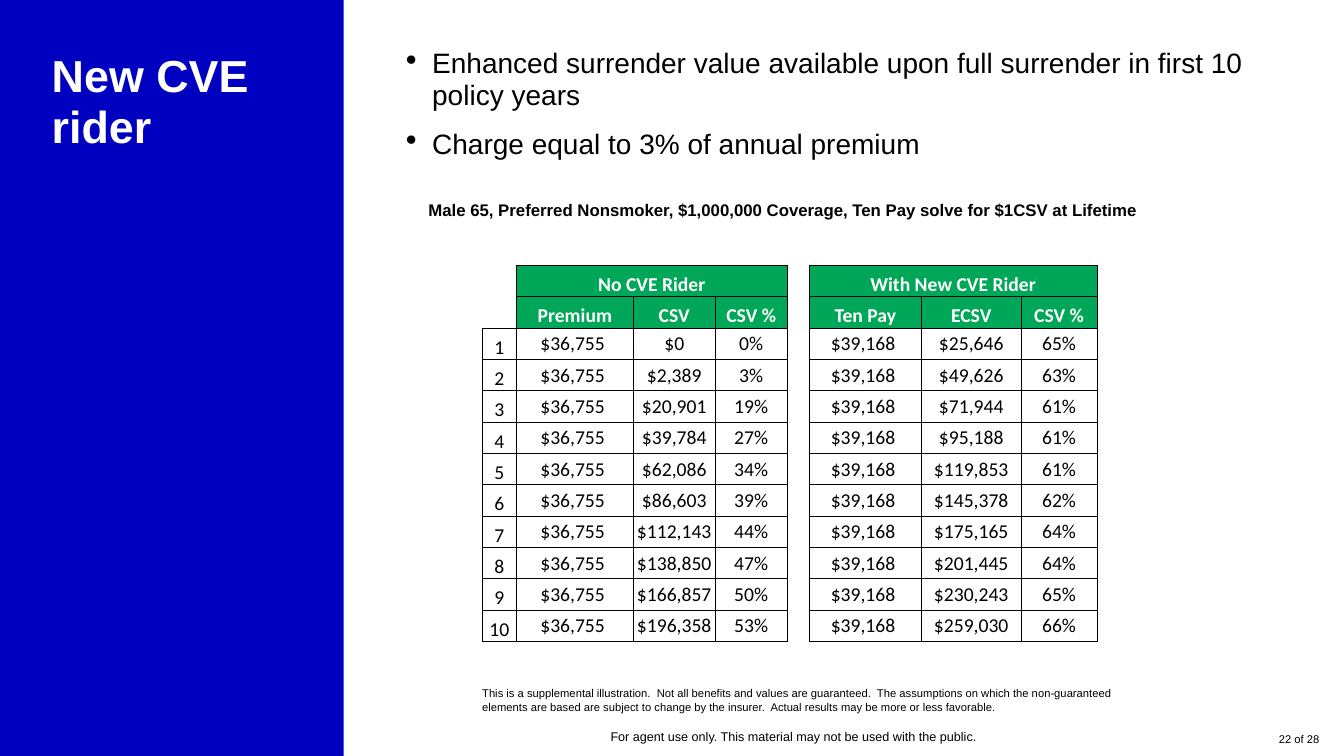
from lxml import etree
from pptx import Presentation
from pptx.dml.color import RGBColor
from pptx.enum.shapes import MSO_SHAPE
from pptx.enum.text import MSO_ANCHOR, PP_ALIGN
from pptx.oxml.ns import qn
from pptx.util import Pt

RECTANGLE = MSO_SHAPE.RECTANGLE
TOP, MIDDLE, BOTTOM = MSO_ANCHOR.TOP, MSO_ANCHOR.MIDDLE, MSO_ANCHOR.BOTTOM
LEFT, CENTER, RIGHT = PP_ALIGN.LEFT, PP_ALIGN.CENTER, PP_ALIGN.RIGHT

COLORS = {"panel": "0000C1", "header": "00A758", "ink": "000000", "paper": "FFFFFF"}

BULLETS = [
    "Enhanced surrender value available upon full surrender in first 10 policy years",
    "Charge equal to 3% of annual premium",
]
CAPTION = "Male 65, Preferred Nonsmoker, $1,000,000 Coverage, Ten Pay solve for $1CSV at Lifetime"
DISCLAIMER = (
    "This is a supplemental illustration.  Not all benefits and values are guaranteed.  "
    "The assumptions on which the non-guaranteed elements are based are subject to change "
    "by the insurer.  Actual results may be more or less favorable."
)
AGENT_NOTE = "For agent use only. This material may not be used with the public."

# Table content: CSV, CSV %, ECSV, CSV % for each policy year
PREMIUM, TEN_PAY = "$36,755 ", "$39,168 "
YEARLY_VALUES = [
    ("$0", "0%", "$25,646", "65%"),
    ("$2,389", "3%", "$49,626", "63%"),
    ("$20,901", "19%", "$71,944", "61%"),
    ("$39,784", "27%", "$95,188", "61%"),
    ("$62,086", "34%", "$119,853", "61%"),
    ("$86,603", "39%", "$145,378", "62%"),
    ("$112,143", "44%", "$175,165", "64%"),
    ("$138,850", "47%", "$201,445", "64%"),
    ("$166,857", "50%", "$230,243", "65%"),
    ("$196,358", "53%", "$259,030", "66%"),
]
COLUMN_WIDTHS = [24.5, 83.5, 58.5, 51.5, 15.8, 80, 71.3, 54.2]
ROW_HEIGHT = 22.4
HEADER_ROWS = 2
GAP_COLUMN = 4
GROUP_STARTS = (1, 5)
GROUP_SPAN = 3


def color(name):
    return RGBColor.from_string(COLORS[name])


def style_runs(para, size, font="Arial", ink="ink", bold=False):
    for span in para.runs:
        span.font.name = font
        span.font.size = Pt(size)
        span.font.bold = bold
        span.font.color.rgb = color(ink)


def add_text(page, box, lines, size, ink="ink", bold=False, align=LEFT,
             anchor=TOP, spacing=None, inset=(0, 0)):
    frame = page.shapes.add_textbox(*map(Pt, box)).text_frame
    frame.word_wrap = True
    frame.vertical_anchor = anchor
    frame.margin_left = frame.margin_right = Pt(inset[0])
    frame.margin_top = frame.margin_bottom = Pt(inset[1])
    frame.text = "\n".join(lines)
    for para in frame.paragraphs:
        para.alignment = align
        if spacing:
            para.line_spacing = spacing
        style_runs(para, size, ink=ink, bold=bold)
    return frame


def add_title_panel(page, box):
    left, top, width, height = box
    panel = page.shapes.add_shape(RECTANGLE, *map(Pt, box))
    panel.shadow.inherit = False
    panel.fill.solid()
    panel.fill.fore_color.rgb = color("panel")
    panel.line.fill.background()
    add_text(page, (left + 37, top + 37, width - 55, height / 2), ["New CVE rider"],
             32, ink="paper", bold=True, spacing=0.95)


def add_bullets(page, box):
    frame = add_text(page, box, BULLETS, 20, spacing=0.95)
    for index, para in enumerate(frame.paragraphs):
        if index:
            para.space_before = Pt(12)
        properties = para._p.get_or_add_pPr()
        properties.set("marL", str(Pt(18.7)))
        properties.set("indent", str(-Pt(18.7)))
        bullet_color = etree.SubElement(properties, qn("a:buClr"))
        etree.SubElement(bullet_color, qn("a:srgbClr"), val=COLORS["ink"])
        etree.SubElement(properties, qn("a:buSzPct"), val="115000")
        etree.SubElement(properties, qn("a:buChar"), char="•")


def set_borders(cell, sides):
    properties = cell._tc.get_or_add_tcPr()
    for position, side in enumerate("LRTB"):
        line = etree.Element(qn(f"a:ln{side}"), w=str(Pt(0.5)))
        if side in sides:
            fill = etree.SubElement(line, qn("a:solidFill"))
            etree.SubElement(fill, qn("a:srgbClr"), val=COLORS["ink"])
        else:
            etree.SubElement(line, qn("a:noFill"))
        properties.insert(position, line)


def border_sides(row, column):
    if column == GAP_COLUMN:
        return "LR"
    if column == 0 and row < HEADER_ROWS:
        return "RB" if row == HEADER_ROWS - 1 else "R"
    return "LRTB"


def format_cell(cell, text, row, column):
    is_header = row < HEADER_ROWS
    is_blank = column == GAP_COLUMN or (is_header and column == 0)
    if is_header and not is_blank:
        cell.fill.solid()
        cell.fill.fore_color.rgb = color("header")
    else:
        cell.fill.background()
    set_borders(cell, border_sides(row, column))
    cell.margin_left = cell.margin_right = Pt(0.72)
    cell.margin_top = Pt(0 if is_blank else 0.72)
    cell.margin_bottom = 0
    cell.vertical_anchor = BOTTOM if is_header or column == 0 else MIDDLE
    cell.text_frame.text = text
    para = cell.text_frame.paragraphs[0]
    para.alignment = CENTER
    style_runs(para, 14, "Calibri", "paper" if is_header else "ink", is_header)


def add_value_table(page, box):
    rows = [
        ["", "No CVE Rider", "", "", "", "With New CVE Rider", "", ""],
        ["", "Premium", "CSV", "CSV %", "", "Ten Pay", "ECSV", "CSV %"],
    ]
    for year, (csv, csv_share, ecsv, ecsv_share) in enumerate(YEARLY_VALUES, 1):
        rows.append([str(year), PREMIUM, csv, csv_share, "", TEN_PAY, ecsv, ecsv_share])

    table = page.shapes.add_table(len(rows), len(COLUMN_WIDTHS), *map(Pt, box)).table
    table.first_row = table.horz_banding = False
    for column, width in zip(table.columns, COLUMN_WIDTHS):
        column.width = Pt(width)
    for table_row in table.rows:
        table_row.height = Pt(ROW_HEIGHT)
    for row, texts in enumerate(rows):
        for column, text in enumerate(texts):
            format_cell(table.cell(row, column), text, row, column)
    for start in GROUP_STARTS:
        table.cell(0, start).merge(table.cell(0, start + GROUP_SPAN - 1))


def add_illustration(page, box):
    left, top, width, height = box
    add_text(page, (left, top, width, 14.5), [CAPTION], 12, bold=True)
    add_value_table(page, (left + 38.4, top + 46.9, sum(COLUMN_WIDTHS),
                           ROW_HEIGHT * (HEADER_ROWS + len(YEARLY_VALUES))))
    add_text(page, (left + 38.4, top + height - 19.5, 466.5, 19.5), [DISCLAIMER], 8)


def add_footer(page, box):
    left, top, width, height = box
    add_text(page, (left, top, width - 53, height), [AGENT_NOTE], 9, inset=(7.2, 3.6))
    add_text(page, (left + width - 35, top + 2, 35, 14), ["22 of 28"], 8,
             align=RIGHT, anchor=BOTTOM)


def main():
    deck = Presentation()
    deck.slide_width, deck.slide_height = Pt(960), Pt(540)
    page = deck.slides.add_slide(deck.slide_layouts[6])
    add_title_panel(page, (0, 0, 245.5, 540))
    add_bullets(page, (290, 34.5, 643, 361.5))
    add_illustration(page, (306, 142.5, 530.5, 367.5))
    add_footer(page, (429, 517, 513.5, 18))
    deck.save("out.pptx")


if __name__ == "__main__":
    main()
